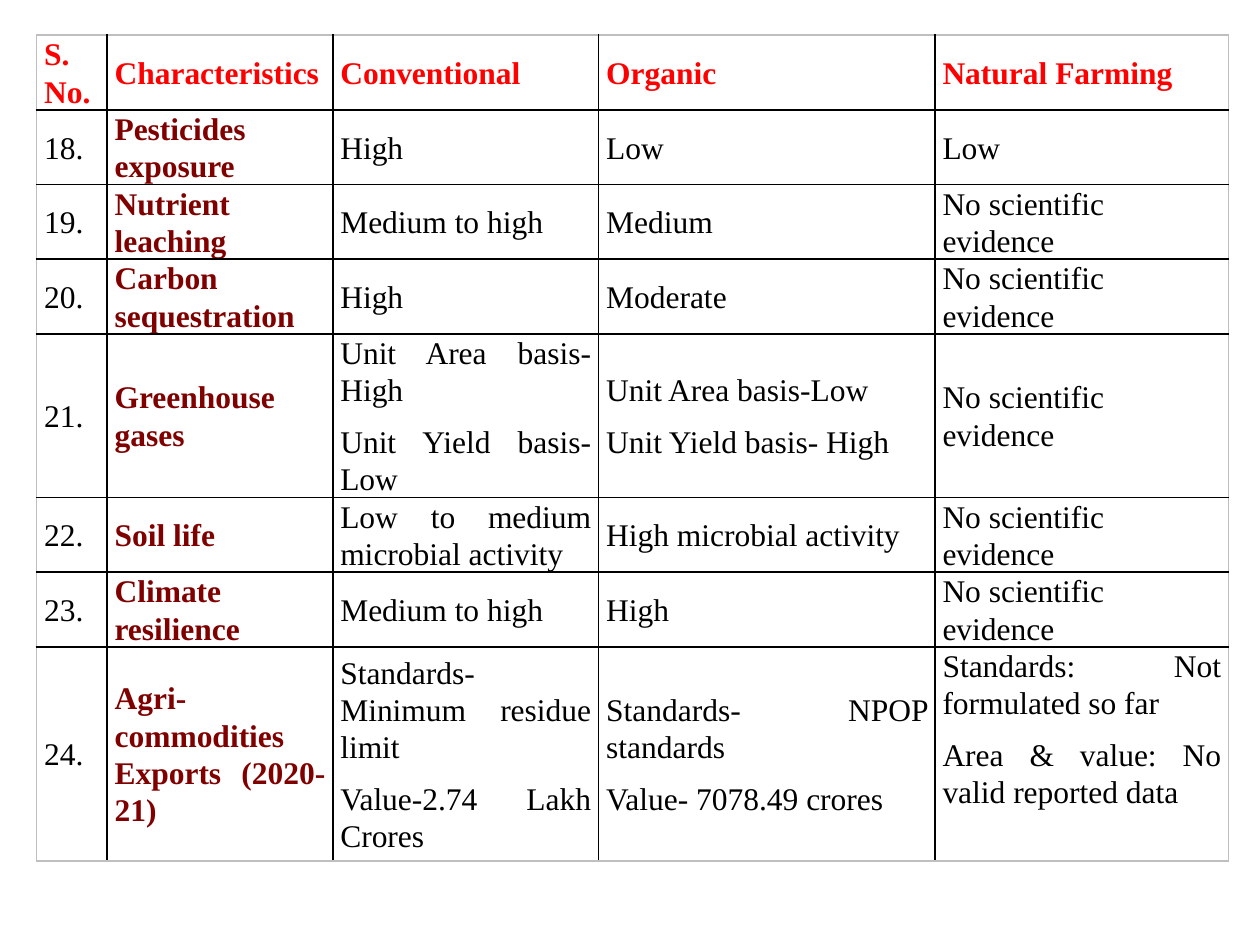
"""Build a one-page table comparing conventional, organic and natural farming."""
from dataclasses import dataclass

from lxml import etree
from pptx import Presentation
from pptx import util as u
from pptx.dml import color
from pptx.enum import text
from pptx.oxml import ns

RED, MAROON, BLACK, WHITE, GREY = "FF0000", "800000", "000000", "FFFFFF", "BFBFBF"
NO_EVIDENCE = "No scientific evidence"
COLUMN_WIDTHS = [1.42, 4.55, 5.36, 6.78, 5.92]
ROW_HEIGHTS = [1.5, 1.5, 1.5, 1.5, 3.3, 1.5, 1.5, 4.32]
HEADINGS = ["S. No.", "Characteristics", "Conventional", "Organic", "Natural Farming"]
FIRST_NUMBER = 18
COMPARISONS = [
    ["Pesticides exposure", "High", "Low", "Low"],
    ["Nutrient leaching", "Medium to high", "Medium", NO_EVIDENCE],
    ["Carbon sequestration", "High", "Moderate", NO_EVIDENCE],
    ["Greenhouse gases", "Unit Area basis-High\nUnit Yield basis-Low",
     "Unit Area basis-Low\nUnit Yield basis- High", NO_EVIDENCE],
    ["Soil life", "Low to medium microbial activity", "High microbial activity", NO_EVIDENCE],
    ["Climate resilience", "Medium to high", "High", NO_EVIDENCE],
    ["Agri-commodities Exports (2020-21)",
     "Standards-Minimum residue limit\nValue-2.74 Lakh Crores",
     "Standards- NPOP standards\nValue- 7078.49 crores",
     "Standards: Not formulated so far\nArea & value: No valid reported data"],
]


def rgb(value):
    """Turn a hex string into a colour."""
    return color.RGBColor.from_string(value)


def write(box, words, *, font, size, ink=BLACK, bold=False, align=text.PP_ALIGN.JUSTIFY):
    """Fill a text frame with one formatted paragraph per line of words."""
    for index, line in enumerate(words.split("\n")):
        para = box.add_paragraph() if index else box.paragraphs[0]
        para.alignment = align
        para.line_spacing = 1.07
        para.space_after = u.Pt(8)
        span = para.add_run()
        span.text = line
        span.font.name = font
        span.font.size = u.Pt(size)
        span.font.bold = bold
        span.font.color.rgb = rgb(ink)


@dataclass
class Page:
    """Hold the text style and the current slide."""

    slide: object
    font: str = "Times New Roman"
    size: int = 18

    def table(self, left, top, widths, heights):
        """Add a plain table with the given column widths and row heights."""
        frame = self.slide.shapes.add_table(
            len(heights), len(widths), u.Cm(left), u.Cm(top),
            u.Cm(sum(widths)), u.Cm(sum(heights)))
        table = frame.table
        table.first_row = table.horz_banding = False
        for column, width in zip(table.columns, widths):
            column.width = u.Cm(width)
        for row, height in zip(table.rows, heights):
            row.height = u.Cm(height)
        return table

    def cell(self, cell, words, edges, anchor=text.MSO_ANCHOR.MIDDLE, **style):
        """Fill one cell with words and draw its edges."""
        cell.margin_left = cell.margin_right = u.Cm(0.15)
        cell.margin_top = cell.margin_bottom = 0
        cell.vertical_anchor = anchor
        cell.fill.solid()
        cell.fill.fore_color.rgb = rgb(WHITE)
        write(cell.text_frame, words, font=self.font, size=self.size, **style)
        self.borders(cell, edges)

    def borders(self, cell, edges):
        """Draw one-point lines on the left, right, top and bottom of a cell."""
        properties = cell._tc.get_or_add_tcPr()
        for index, (side, ink) in enumerate(zip("LRTB", edges)):
            line = etree.Element(ns.qn(f"a:ln{side}"), w=str(u.Pt(1)))
            fill = etree.SubElement(line, ns.qn("a:solidFill"))
            etree.SubElement(fill, ns.qn("a:srgbClr"), val=ink)
            properties.insert(index, line)


def main():
    """Build and save the deck."""
    deck = Presentation()
    deck.slide_width, deck.slide_height = u.Cm(25.4), u.Cm(19.05)
    page = Page(deck.slides.add_slide(deck.slide_layouts[6]))
    table = page.table(0.74, 0.71, COLUMN_WIDTHS, ROW_HEIGHTS)
    rows = [HEADINGS] + [[f"{number}.", *entries]
                         for number, entries in enumerate(COMPARISONS, FIRST_NUMBER)]
    last_row, last_column = len(rows) - 1, len(HEADINGS) - 1
    for r, entries in enumerate(rows):
        for c, words in enumerate(entries):
            outer = (c == 0, c == last_column, r == 0, r == last_row)
            edges = [GREY if edge else BLACK for edge in outer]
            style = {"bold": r == 0 or c == 1}
            if r == 0:
                style["ink"] = RED
            elif c == 1:
                style["ink"] = MAROON
            elif c == last_column and r == last_row:
                style["anchor"] = text.MSO_ANCHOR.TOP
            elif c == last_column:
                style["align"] = text.PP_ALIGN.LEFT
            page.cell(table.cell(r, c), words, edges, **style)
    deck.save("out.pptx")


if __name__ == "__main__":
    main()
